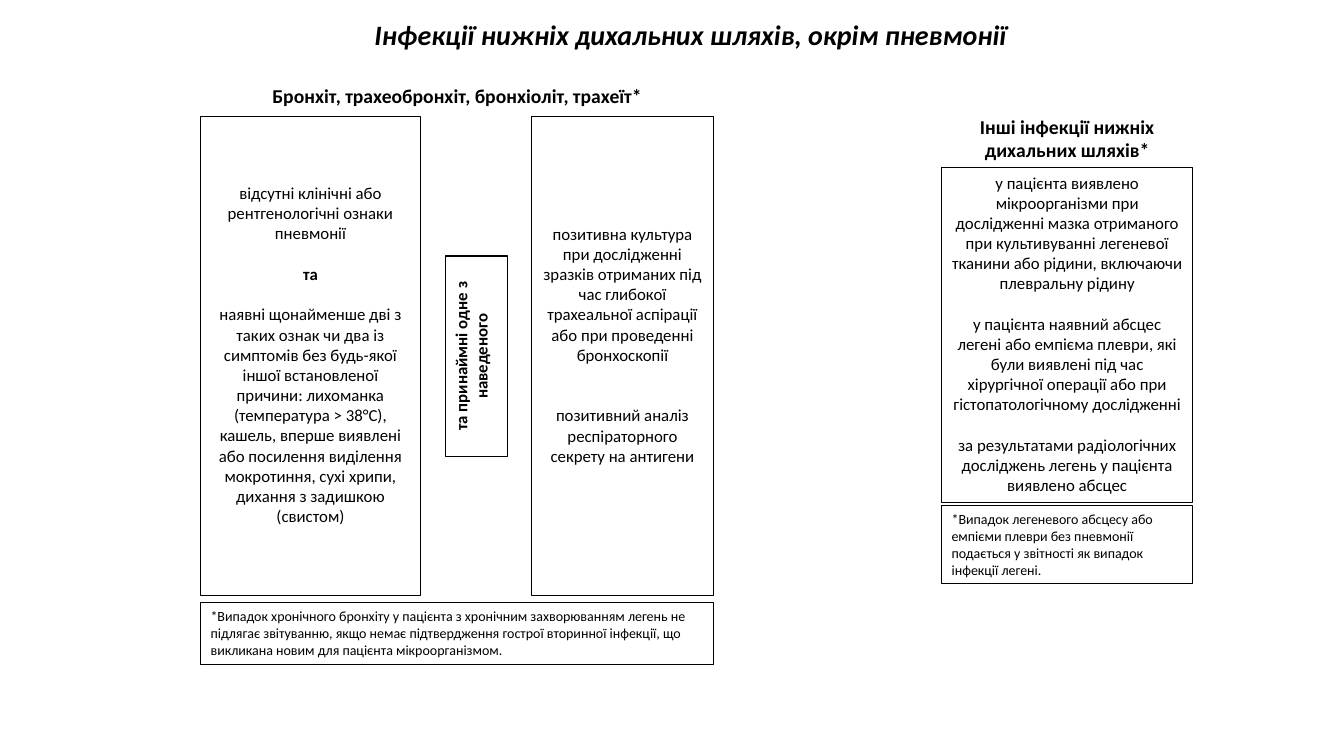
"""Build a one-slide case definition for lower respiratory tract infections."""
from pptx import Presentation
from pptx.dml.color import RGBColor
from pptx.enum.shapes import MSO_SHAPE
from pptx.enum.text import MSO_ANCHOR, MSO_AUTO_SIZE, PP_ALIGN
from pptx.util import Inches, Pt

BLACK = RGBColor(0, 0, 0)
WIDTH, HEIGHT = Inches(13.33), Inches(7.5)
COLS = ROWS = 100
LINE = 14.5

LEFT, LEFT_W = 14.93, 38.18
RIGHT, RIGHT_W = 70.07, 18.68
SIGNS_W, CULTURE_W = 16.35, 13.58
CRITERIA_TOP, CRITERIA_H = 15.47, 63.33

BODY = {"name": "Calibri", "size": Pt(12), "bold": False}
STRONG = {**BODY, "bold": True}
HEADING = {**STRONG, "size": Pt(14)}
TITLE = {**STRONG, "size": Pt(20), "italic": True}
NOTE = {**BODY, "size": Pt(10)}


def place(col, row, cols, rows):
    """Turn grid columns and rows into left, top, width and height."""
    w, h = WIDTH / COLS, HEIGHT / ROWS
    return int(col * w), int(row * h), int(cols * w), int(rows * h)


def write(sp, paragraphs, align=PP_ALIGN.CENTER, gap=1, lead=0):
    """Write (text, format) paragraphs, with gaps and lead in text lines."""
    tf = sp.text_frame
    frame = {"word_wrap": True, "auto_size": MSO_AUTO_SIZE.NONE,
             "vertical_anchor": MSO_ANCHOR.TOP,
             "margin_top": Inches(0.05) + Pt(lead * LINE)}
    for key, value in frame.items():
        setattr(tf, key, value)
    for i, (text, style) in enumerate(paragraphs):
        p = tf.add_paragraph() if i else tf.paragraphs[0]
        p.alignment = align
        if i:
            p.space_before = Pt(gap * LINE)
        r = p.add_run()
        r.text = text
        r.font.color.rgb = BLACK
        for key, value in style.items():
            setattr(r.font, key, value)


def add_label(s, cell, text, style):
    """Add a centred heading without a frame."""
    write(s.shapes.add_textbox(*place(*cell)), [(text, style)])


def add_box(s, cell, paragraphs, **layout):
    """Add a framed rectangle with text and return it."""
    sp = s.shapes.add_shape(MSO_SHAPE.RECTANGLE, *place(*cell))
    sp.shadow.inherit = False
    sp.fill.background()
    sp.line.color.rgb = BLACK
    sp.line.width = Pt(0.75)
    write(sp, paragraphs, **layout)
    return sp


def add_note(s, cell, text):
    """Add a framed footnote."""
    add_box(s, cell, [(text, NOTE)], align=PP_ALIGN.LEFT)


def add_bronchitis(s):
    """Add the left-hand definition."""
    add_label(s, (LEFT, 10.4, LEFT_W, 4.53),
              "Бронхіт, трахеобронхіт, бронхіоліт, трахеїт*", HEADING)
    add_box(s, (LEFT, CRITERIA_TOP, SIGNS_W, CRITERIA_H), [
        ("відсутні клінічні або рентгенологічні ознаки пневмонії", BODY),
        ("та", STRONG),
        ("наявні щонайменше дві з таких ознак чи два із симптомів без "
         "будь-якої іншої встановленої причини: лихоманка (температура > "
         "38°С), кашель, вперше виявлені або посилення виділення мокротиння, "
         "сухі хрипи, дихання з задишкою (свистом)", BODY)], lead=3)
    link = add_box(s, (33.16, 33.87, 4.58, 26.53),
                   [("та принаймні одне з наведеного", STRONG)])
    link.element.txBody.bodyPr.set("vert", "vert270")
    add_box(s, (LEFT + LEFT_W - CULTURE_W, CRITERIA_TOP, CULTURE_W, CRITERIA_H), [
        ("позитивна культура при дослідженні зразків отриманих під час "
         "глибокої трахеальної аспірації або при проведенні бронхоскопії", BODY),
        ("позитивний аналіз респіраторного секрету на антигени", BODY)],
        gap=2, lead=5)
    add_note(s, (LEFT, 79.73, LEFT_W, 8.13),
             "*Випадок хронічного бронхіту у пацієнта з хронічним "
             "захворюванням легень не підлягає звітуванню, якщо немає "
             "підтвердження гострої вторинної інфекції, що викликана новим "
             "для пацієнта мікроорганізмом.")


def add_other_infections(s):
    """Add the right-hand definition."""
    add_label(s, (RIGHT, 14.53, RIGHT_W, 7.6),
              "Інші інфекції нижніх дихальних шляхів*", HEADING)
    add_box(s, (RIGHT, 22.13, RIGHT_W, 44.4), [
        ("у пацієнта виявлено мікроорганізми при дослідженні мазка "
         "отриманого при культивуванні легеневої тканини або рідини, "
         "включаючи плевральну рідину", BODY),
        ("у пацієнта наявний абсцес легені або емпієма плеври, які були "
         "виявлені під час хірургічної операції або при гістопатологічному "
         "дослідженні", BODY),
        ("за результатами радіологічних досліджень легень у пацієнта "
         "виявлено абсцес", BODY)])
    add_note(s, (RIGHT, 66.93, RIGHT_W, 10.27),
             "*Випадок легеневого абсцесу або емпієми плеври без пневмонії "
             "подається у звітності як випадок інфекції легені.")


def main():
    """Build and save the presentation."""
    prs = Presentation()
    prs.slide_width, prs.slide_height = WIDTH, HEIGHT
    s = prs.slides.add_slide(prs.slide_layouts[6])
    add_label(s, (14.03, 1.6, 74.72, 5.87),
              "Інфекції нижніх дихальних шляхів, окрім пневмонії", TITLE)
    add_bronchitis(s)
    add_other_infections(s)
    prs.save("out.pptx")


if __name__ == "__main__":
    main()
